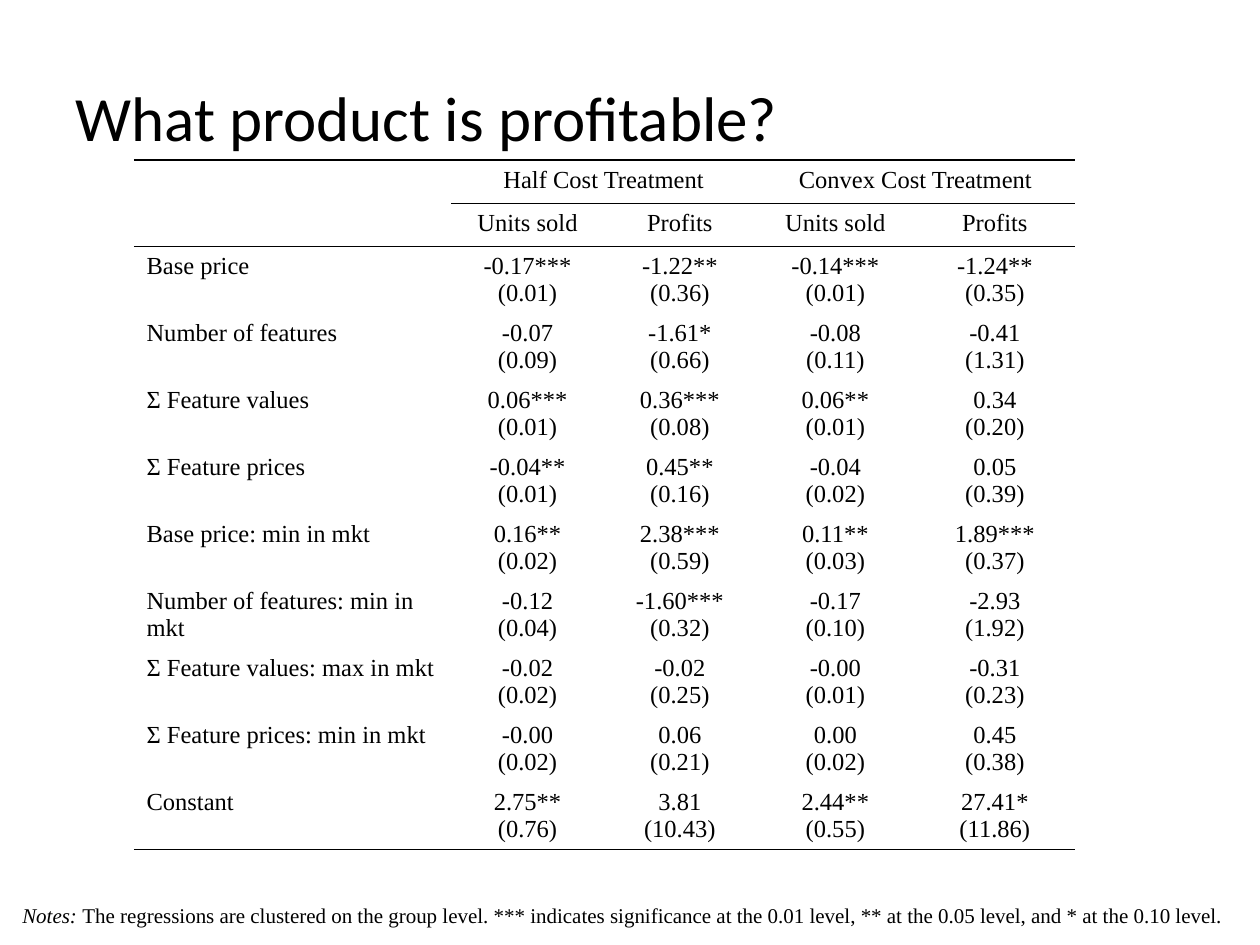
from lxml import etree
from pptx import Presentation
from pptx import util as u
from pptx.dml.color import RGBColor
from pptx.enum import text
from pptx.oxml import ns

BLACK = RGBColor(0, 0, 0)
SERIF = "Times New Roman"
SANS = "Calibri"

WIDTHS = [6.4, 3.07, 3.07, 3.2, 3.23]
HEADS = [
    ["", "Half Cost Treatment", "", "Convex Cost Treatment", ""],
    ["", "Units sold", "Profits", "Units sold", "Profits"],
]
ROWS = [
    ["Base price", "-0.17*** (0.01)", "-1.22** (0.36)", "-0.14*** (0.01)", "-1.24** (0.35)"],
    ["Number of features", "-0.07 (0.09)", "-1.61* (0.66)", "-0.08 (0.11)", "-0.41 (1.31)"],
    ["Ʃ Feature values", "0.06*** (0.01)", "0.36*** (0.08)", "0.06** (0.01)", "0.34 (0.20)"],
    ["Ʃ Feature prices", "-0.04** (0.01)", "0.45** (0.16)", "-0.04 (0.02)", "0.05 (0.39)"],
    ["Base price: min in mkt", "0.16** (0.02)", "2.38*** (0.59)", "0.11** (0.03)", "1.89*** (0.37)"],
    ["Number of features: min in mkt", "-0.12 (0.04)", "-1.60*** (0.32)", "-0.17 (0.10)", "-2.93 (1.92)"],
    ["Ʃ Feature values: max in mkt", "-0.02 (0.02)", "-0.02 (0.25)", "-0.00 (0.01)", "-0.31 (0.23)"],
    ["Ʃ Feature prices: min in mkt", "-0.00 (0.02)", "0.06 (0.21)", "0.00 (0.02)", "0.45 (0.38)"],
    ["Constant", "2.75** (0.76)", "3.81 (10.43)", "2.44** (0.55)", "27.41* (11.86)"],
]


class Deck:
    def __init__(self):
        self.prs = Presentation()
        self.prs.slide_width = u.Cm(25.4)
        self.prs.slide_height = u.Cm(19.05)
        self.slide = self.prs.slides.add_slide(self.prs.slide_layouts[5])

    def style(self, par, size, name=SERIF, align=text.PP_ALIGN.LEFT):
        par.alignment = align
        par.font.size = u.Pt(size)
        par.font.name = name
        par.font.color.rgb = BLACK

    def title(self, words, box):
        shape = self.slide.shapes.title
        shape.left, shape.top, shape.width, shape.height = map(u.Cm, box)
        frame = shape.text_frame
        frame.text = words
        frame.vertical_anchor = text.MSO_ANCHOR.MIDDLE
        self.style(frame.paragraphs[0], 36, SANS)

    def edge(self, cell, side, drawn):
        line = etree.SubElement(cell._tc.get_or_add_tcPr(), ns.qn(f"a:ln{side}"))
        if drawn:
            line.set("w", str(u.Pt(1)))
            fill = etree.SubElement(line, ns.qn("a:solidFill"))
            etree.SubElement(fill, ns.qn("a:srgbClr"), val=str(BLACK))
        else:
            line.set("w", "0")
            etree.SubElement(line, ns.qn("a:noFill"))

    def table(self, heads, rows, widths, left, top):
        data = heads + rows
        highs = [0.87] * len(heads) + [1.35] * len(rows)
        grid = self.slide.shapes.add_table(
            len(data), len(widths), u.Cm(left), u.Cm(top),
            u.Cm(sum(widths)), u.Cm(sum(highs))).table
        grid.first_row = grid.horz_banding = False
        for col, wide in zip(grid.columns, widths):
            col.width = u.Cm(wide)
        for row, high in zip(grid.rows, highs):
            row.height = u.Cm(high)
        rules = {0, len(heads), len(data)}
        for r, row in enumerate(data):
            for c, words in enumerate(row):
                cell = grid.cell(r, c)
                if r >= len(heads) and c:
                    words = words.replace(" ", "\n")
                cell.text = words
                align = text.PP_ALIGN.CENTER if c else text.PP_ALIGN.LEFT
                for par in cell.text_frame.paragraphs:
                    self.style(par, 14, align=align)
                for side, at in (("L", None), ("R", None), ("T", r), ("B", r + 1)):
                    self.edge(cell, side, at in rules or (at == 1 and c > 0))
                cell.fill.background()
        for c in (1, 3):
            grid.cell(0, c).merge(grid.cell(0, c + 1))

    def note(self, lead, words, box):
        frame = self.slide.shapes.add_textbox(*map(u.Cm, box)).text_frame
        frame.word_wrap = True
        frame.auto_size = text.MSO_AUTO_SIZE.SHAPE_TO_FIT_TEXT
        par = frame.paragraphs[0]
        self.style(par, 12)
        run = par.add_run()
        run.text = lead
        run.font.italic = True
        par.add_run().text = words


def main():
    deck = Deck()
    deck.title("What product is profitable?", (1.27, 0.76, 22.86, 3.18))
    deck.table(HEADS, ROWS, WIDTHS, 2.7, 3.23)
    deck.note(
        "Notes: ",
        "The regressions are clustered on the group level. *** indicates significance "
        "at the 0.01 level, ** at the 0.05 level, and * at the 0.10 level.",
        (0.2, 18.06, 25.1, 0.77))
    deck.prs.save("out.pptx")


if __name__ == "__main__":
    main()
